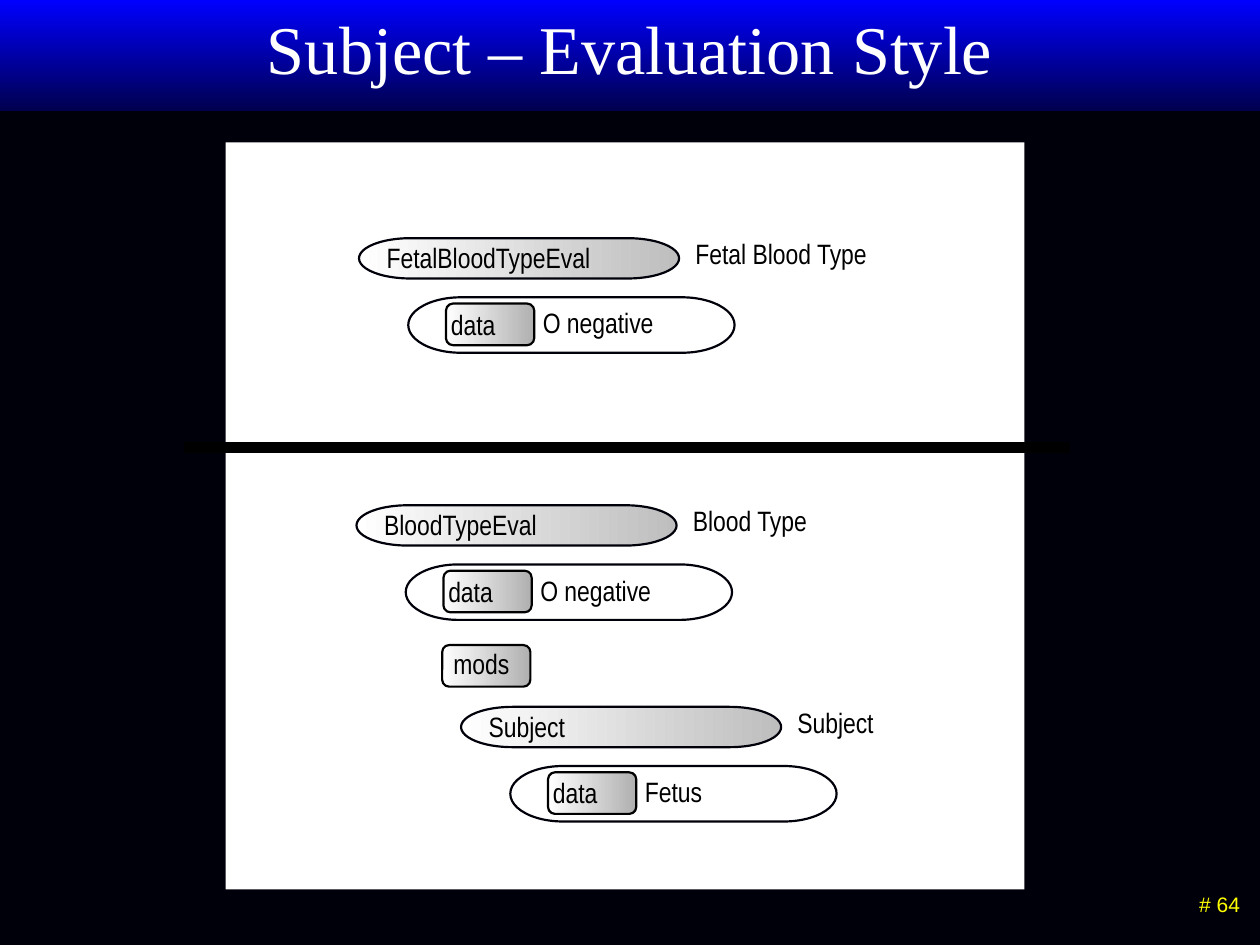
from dataclasses import dataclass

from lxml.etree import SubElement
from pptx import Presentation
from pptx.dml.color import RGBColor
from pptx.enum.shapes import MSO_CONNECTOR, MSO_SHAPE
from pptx.enum.text import MSO_ANCHOR, MSO_AUTO_SIZE, PP_ALIGN
from pptx.oxml.ns import qn
from pptx.util import Inches, Pt

WHITE, BLACK, NIGHT = "FFFFFF", "000000", "00000A"
PILL_GRAY, TAG_GRAY = "BEBEBE", "B0B0B0"
LABEL_FORMAT = {"name": "Arial Narrow", "size": Pt(16)}
TITLE_FORMAT = {"name": "Times New Roman", "size": Pt(39)}
NUMBER_FORMAT = {"name": "Arial", "size": Pt(12)}
LABEL_HEIGHT = 0.37


@dataclass(frozen=True)
class Evaluation:
    """A named statement with its caption and data value; left and top place the name pill."""
    left: float
    top: float
    name: str
    name_width: float
    caption: str
    caption_width: float
    value: str
    value_width: float


EVALUATIONS = [
    Evaluation(2.85, 1.89, "FetalBloodTypeEval", 1.83, "Fetal Blood Type", 1.59, "O negative", 1.33),
    Evaluation(2.83, 4.01, "BloodTypeEval", 1.43, "Blood Type", 1.59, "O negative", 1.33),
    Evaluation(3.66, 5.61, "Subject", 0.81, "Subject", 0.83, "Fetus", 0.74),
]


def color(hex_code: str) -> RGBColor:
    return RGBColor.from_string(hex_code)


def format_text(frame, text: str, font_format: dict, hex_code: str, align=PP_ALIGN.LEFT) -> None:
    paragraph = frame.paragraphs[0]
    paragraph.alignment = align
    run = paragraph.add_run()
    run.text = text
    for attribute, value in font_format.items():
        setattr(run.font, attribute, value)
    run.font.color.rgb = color(hex_code)


def add_block(slide, kind, left: float, top: float, width: float, height: float,
              fills: tuple[str, ...], line: str | None = None, angle: float = 0):
    """Draw a preset shape; two fills make a gradient."""
    block = slide.shapes.add_shape(kind, Inches(left), Inches(top), Inches(width), Inches(height))
    block.shadow.inherit = False
    if len(fills) == 1:
        block.fill.solid()
        block.fill.fore_color.rgb = color(fills[0])
    else:
        block.fill.gradient()
        block.fill.gradient_angle = angle
        for stop, hex_code in zip(block.fill.gradient_stops, fills):
            stop.color.rgb = color(hex_code)
    if line:
        block.line.color.rgb = color(line)
        block.line.width = Pt(1.25)
    else:
        block.line.fill.background()
    return block


def add_label(slide, text: str, left: float, top: float, width: float, wrap: bool = True) -> None:
    label = slide.shapes.add_textbox(Inches(left), Inches(top), Inches(width), Inches(LABEL_HEIGHT))
    label.text_frame.word_wrap = wrap
    label.text_frame.auto_size = MSO_AUTO_SIZE.SHAPE_TO_FIT_TEXT
    format_text(label.text_frame, text, LABEL_FORMAT, BLACK)


def add_tag(slide, left: float, top: float) -> None:
    """Draw the small rounded box behind a slot name."""
    add_block(slide, MSO_SHAPE.ROUNDED_RECTANGLE, left, top, 0.7, 0.33, (WHITE, TAG_GRAY), BLACK)


def add_evaluation(slide, item: Evaluation) -> None:
    left, top = item.left, item.top
    add_block(slide, MSO_SHAPE.FLOWCHART_TERMINATOR, left + 0.39, top + 0.47, 2.59, 0.44,
              (WHITE,), NIGHT)
    add_tag(slide, left + 0.69, top + 0.52)
    add_label(slide, "data", left + 0.63, top + 0.5, 0.57, wrap=False)
    add_label(slide, item.value, left + 1.36, top + 0.49, item.value_width)
    add_label(slide, item.caption, left + 2.57, top - 0.06, item.caption_width)
    add_block(slide, MSO_SHAPE.FLOWCHART_TERMINATOR, left, top, 2.54, 0.32,
              (WHITE, PILL_GRAY), NIGHT)
    add_label(slide, item.name, left + 0.12, top - 0.03, item.name_width, wrap=False)


def add_title(slide, text: str) -> None:
    title = slide.shapes.title
    title.left, title.top, title.width, title.height = Inches(0.75), 0, Inches(8.5), Inches(1.25)
    frame = title.text_frame
    frame.auto_size = MSO_AUTO_SIZE.NONE
    frame.vertical_anchor = MSO_ANCHOR.TOP
    frame.margin_top = Inches(0.05)
    format_text(frame, text, TITLE_FORMAT, WHITE, PP_ALIGN.CENTER)
    # Bring the title in front of the header band.
    slide.shapes.element.append(title.element)


def add_slide_number(slide, text: str) -> None:
    number = slide.shapes.add_textbox(Inches(8.9), Inches(7.03), Inches(1.04), Inches(0.34))
    number.text_frame.word_wrap = True
    number.text_frame.vertical_anchor = MSO_ANCHOR.TOP
    format_text(number.text_frame, text, NUMBER_FORMAT, "FFFF00", PP_ALIGN.RIGHT)


def add_divider(slide) -> None:
    divider = slide.shapes.add_connector(
        MSO_CONNECTOR.STRAIGHT, Inches(1.46), Inches(3.55), Inches(8.49), Inches(3.55))
    divider.line.color.rgb = color(BLACK)
    divider.line.width = Pt(6)
    SubElement(divider.element.spPr, qn("a:effectLst"))


def main() -> None:
    presentation = Presentation()
    presentation.slide_width, presentation.slide_height = Inches(10), Inches(7.5)
    slide = presentation.slides.add_slide(presentation.slide_layouts[5])
    slide.background.fill.solid()
    slide.background.fill.fore_color.rgb = color(NIGHT)

    add_block(slide, MSO_SHAPE.RECTANGLE, 0, 0, 10, 0.88, ("0000FF", "00004F"), angle=270)
    add_slide_number(slide, "# 64")
    add_block(slide, MSO_SHAPE.RECTANGLE, 1.79, 1.13, 6.34, 5.93, (WHITE,))
    add_title(slide, "Subject – Evaluation Style")

    for item in EVALUATIONS:
        add_evaluation(slide, item)
    add_tag(slide, 3.51, 5.12)
    add_label(slide, "mods", 3.5, 5.08, 0.65, wrap=False)
    add_divider(slide)

    presentation.save("out.pptx")


if __name__ == "__main__":
    main()
